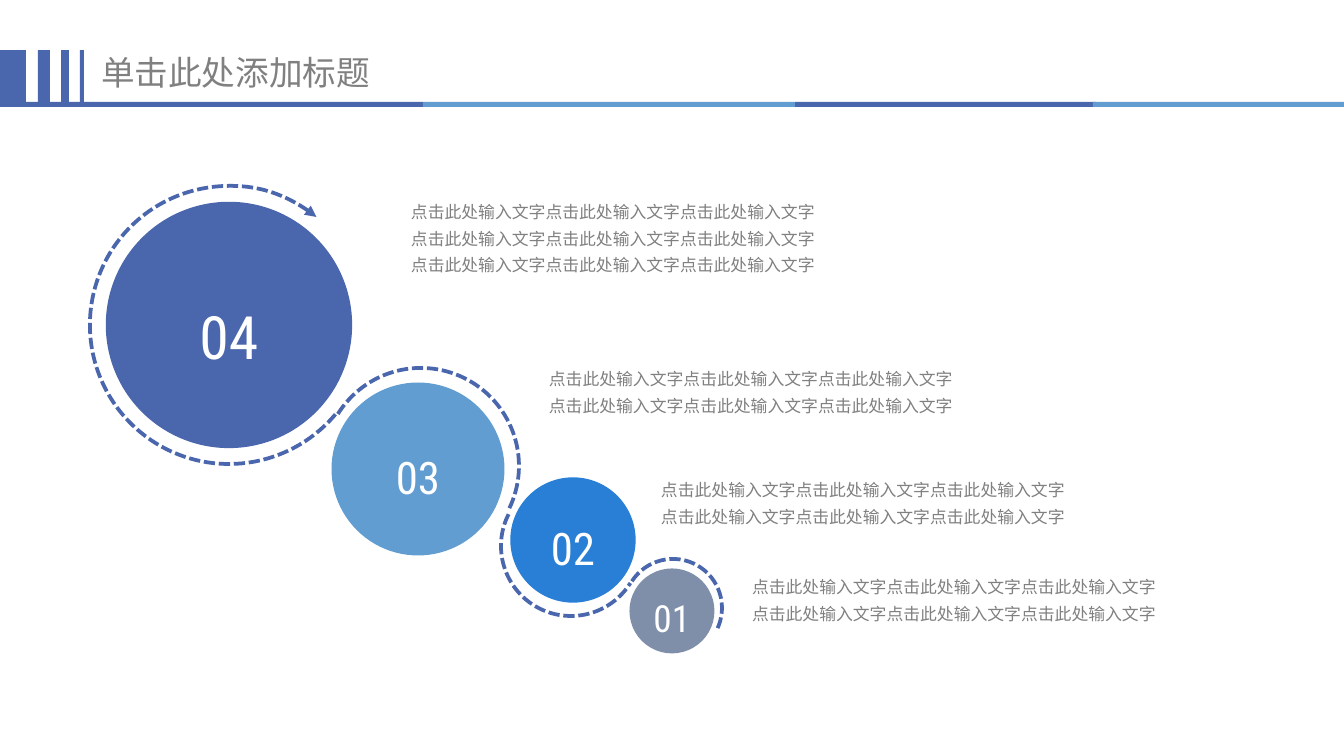
from math import ceil, cos, radians, sin, tan

from lxml.etree import SubElement
from pptx import Presentation
from pptx.dml.color import RGBColor
from pptx.enum.dml import MSO_LINE
from pptx.enum.shapes import MSO_SHAPE
from pptx.enum.text import MSO_ANCHOR, PP_ALIGN
from pptx.oxml.ns import qn
from pptx.util import Emu, Pt

NAVY = RGBColor(0x4A, 0x66, 0xAC)
SKY = RGBColor(0x62, 0x9D, 0xD1)
BLUE = RGBColor(0x29, 0x7F, 0xD5)
SLATE = RGBColor(0x7F, 0x8F, 0xA9)
GRAY = RGBColor(0x80, 0x80, 0x80)
WHITE = RGBColor(0xFF, 0xFF, 0xFF)
CJK = "Noto Sans CJK SC"

TITLE = "单击此处添加标题"
LINE = "点击此处输入文字" * 3
BARS = [(0, 26), (38, 12), (61, 8), (80, 4)]
BANDS = [(0, 423, NAVY), (423, 372, SKY), (795, 301, NAVY), (1093, 251, SKY)]
ARCS = [
    (229, 325, 139, 40, 309, True),
    (421, 466, 98, 212, 386, False),
    (571, 546, 70, 207, 32, False),
    (673, 608, 49, 213, 386, False),
]
DISCS = [
    ("04", 229, 325, 245, NAVY, 32, True),
    ("03", 418, 469, 173, SKY, 24, False),
    ("02", 573, 540, 124, BLUE, 24, True),
    ("01", 672, 611, 85, SLATE, 20, False),
]
NOTES = [
    (401, 191, 617, 3),
    (539, 358, 578, 2),
    (651, 469, 562, 2),
    (742, 566, 566, 2),
]


def px(n):
    return Emu(round(n * 914400 / 134.4))


def write(shape, rows, size, font, color, align=PP_ALIGN.LEFT, space=None,
          anchor=MSO_ANCHOR.TOP, pad=(0, 0)):
    frame = shape.text_frame
    frame.word_wrap = True
    frame.vertical_anchor = anchor
    frame.margin_left = frame.margin_right = px(pad[0])
    frame.margin_top = frame.margin_bottom = px(pad[1])
    for i, row in enumerate(rows):
        para = frame.add_paragraph() if i else frame.paragraphs[0]
        para.alignment = align
        para.line_spacing = space
        run = para.add_run()
        run.text = row
        run.font.size = Pt(size)
        run.font.color.rgb = color
        run.font.name = font
        SubElement(run.font._element, qn("a:ea"), typeface=CJK)


def block(kind, x, y, w, h, color, edge=False):
    shape = shapes.add_shape(kind, px(x), px(y), px(w), px(h))
    shape.shadow.inherit = False
    shape.fill.solid()
    shape.fill.fore_color.rgb = color
    if edge:
        shape.line.color.rgb = color
        shape.line.width = Pt(0.75)
    else:
        shape.line.fill.background()
    return shape


def arc(x, y, r, start, end, arrow):
    count = ceil(abs(end - start) / 45)
    step = radians(end - start) / count
    pull = 4 / 3 * tan(step / 4)

    def spot(turn, lean):
        return (px(x + r * (cos(turn) - lean * sin(turn))),
                px(y + r * (sin(turn) + lean * cos(turn))))

    first = radians(start)
    dots = []
    for i in range(count):
        a, b = first + i * step, first + (i + 1) * step
        dots += [spot(a, pull), spot(b, -pull), spot(b, 0)]
    pen = shapes.build_freeform(*spot(first, 0))
    pen.add_line_segments(dots, close=False)
    shape = pen.convert_to_shape()
    track = shape._element.find(".//" + qn("a:path"))
    legs = track.findall(qn("a:lnTo"))
    for i in range(0, len(legs), 3):
        curve = SubElement(track, qn("a:cubicBezTo"))
        for leg in legs[i:i + 3]:
            curve.append(leg[0])
            track.remove(leg)
    shape.shadow.inherit = False
    shape.fill.background()
    shape.line.color.rgb = NAVY
    shape.line.width = Pt(2)
    shape.line.dash_style = MSO_LINE.SQUARE_DOT
    if arrow:
        SubElement(shape.line._get_or_add_ln(), qn("a:tailEnd"), type="triangle")


deck = Presentation()
deck.slide_width, deck.slide_height = px(1344), px(756)
shapes = deck.slides.add_slide(deck.slide_layouts[6]).shapes

head = shapes.add_textbox(px(91), px(47), px(359), px(51))
write(head, [TITLE], 18, CJK, GRAY, pad=(10, 5))
for x, w in BARS:
    block(MSO_SHAPE.RECTANGLE, x, 50, w, 52, NAVY)
for x, w, color in BANDS:
    block(MSO_SHAPE.RECTANGLE, x, 102, w, 5, color)

for item in ARCS:
    arc(*item)
for label, x, y, d, color, size, edge in DISCS:
    disc = block(MSO_SHAPE.OVAL, x - d / 2, y - d / 2, d, d, color, edge)
    write(disc, [label], size, "Roboto Condensed", WHITE, PP_ALIGN.CENTER,
          1.3, MSO_ANCHOR.MIDDLE)
for x, y, w, rows in NOTES:
    note = shapes.add_textbox(px(x), px(y), px(w), px(10 + 26.5 * rows))
    write(note, [LINE] * rows, 9, "Calibri", GRAY, PP_ALIGN.JUSTIFY, 1.3,
          pad=(10, 5))

deck.save("out.pptx")
